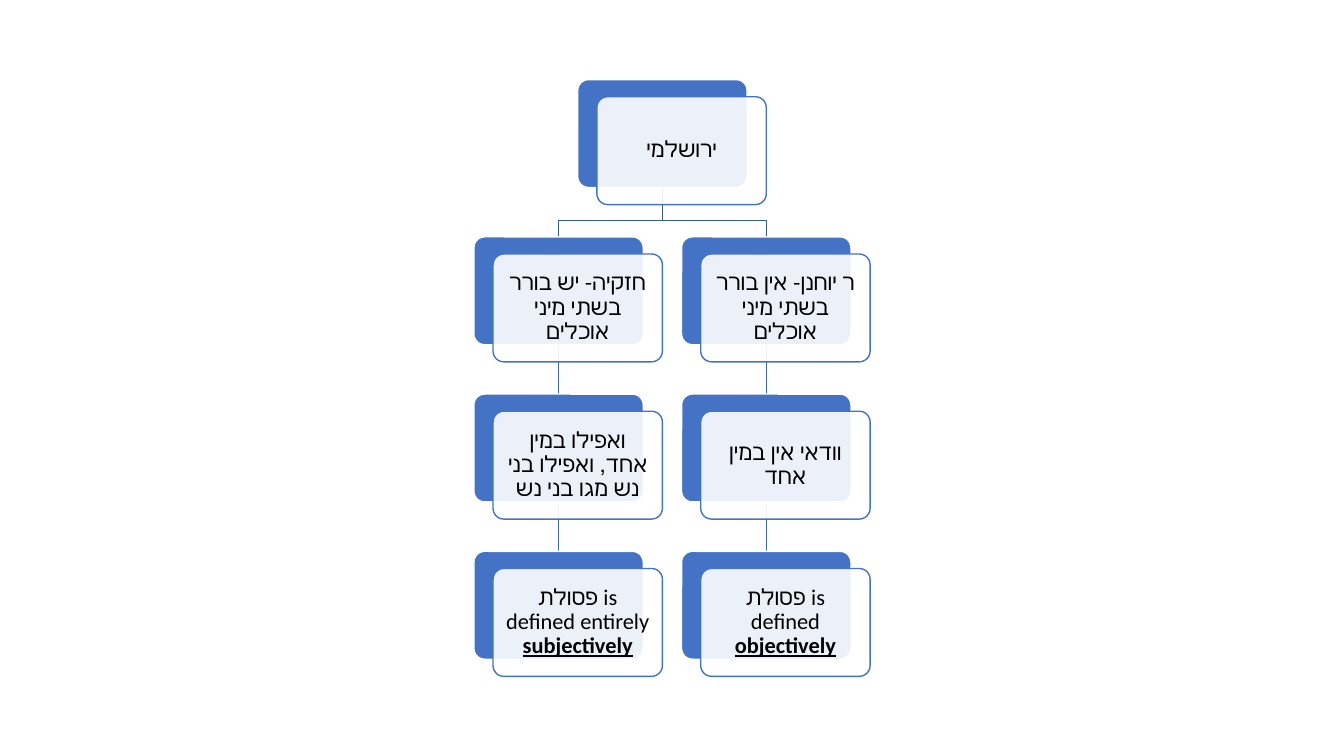
from dataclasses import dataclass

from lxml import etree
from pptx import Presentation
from pptx import util as u
from pptx.dml.color import RGBColor
from pptx.enum import shapes, text
from pptx.oxml import ns


@dataclass(frozen=True)
class Theme:
    blue: RGBColor = RGBColor(0x44, 0x72, 0xC4)
    branch: RGBColor = RGBColor(0x36, 0x5B, 0x9D)
    stem: RGBColor = RGBColor(0x3E, 0x67, 0xB2)
    white: RGBColor = RGBColor(0xFF, 0xFF, 0xFF)
    black: RGBColor = RGBColor(0, 0, 0)
    font: str = "Calibri"
    size: u.Pt = u.Pt(16)
    line: u.Pt = u.Pt(1)
    front_opacity: int = 90


THEME = Theme()
CARD_W, CARD_H = u.Inches(1.68), u.Inches(1.07)
COLUMN_STEP, ROW_STEP = u.Inches(2.06), u.Inches(1.56)
OFFSET_X, OFFSET_Y = u.Inches(0.19), u.Inches(0.17)
BRANCH_DROP = u.Inches(0.33)

ROOT = "ירושלמי"
OPINIONS = [
    [
        ("חזקיה- יש בורר בשתי מיני אוכלים", ""),
        ("ואפילו במין אחד, ואפילו בני נש מגו בני נש", ""),
        ("פסולת is defined entirely ", "subjectively"),
    ],
    [
        ("ר יוחנן- אין בורר בשתי מיני אוכלים", ""),
        ("וודאי אין במין אחד", ""),
        ("פסולת is defined ", "objectively"),
    ],
]


def add_panel(slide, left, top, fill, line):
    panel = slide.shapes.add_shape(
        shapes.MSO_SHAPE.ROUNDED_RECTANGLE, left, top, CARD_W, CARD_H)
    panel.adjustments[0] = 0.1
    panel.shadow.inherit = False
    panel.fill.solid()
    panel.fill.fore_color.rgb = fill
    panel.line.color.rgb = line
    panel.line.width = THEME.line
    return panel


def add_card(slide, left, top, statement, emphasis=""):
    add_panel(slide, left, top, THEME.blue, THEME.white)
    front = add_panel(slide, left + OFFSET_X, top + OFFSET_Y, THEME.white, THEME.blue)
    color = front.fill._xPr.find(ns.qn("a:solidFill"))[0]
    etree.SubElement(color, ns.qn("a:alpha"), val=str(THEME.front_opacity * 1000))

    frame = front.text_frame
    frame.word_wrap = True
    frame.vertical_anchor = text.MSO_ANCHOR.MIDDLE
    frame.margin_left = frame.margin_right = u.Inches(0.07)
    frame.margin_top = frame.margin_bottom = u.Inches(0.07)
    paragraph = frame.paragraphs[0]
    paragraph.alignment = text.PP_ALIGN.CENTER
    paragraph.line_spacing = 0.9
    paragraph.font.name = THEME.font
    paragraph.font.size = THEME.size
    paragraph.font.color.rgb = THEME.black
    paragraph.add_run().text = statement
    if emphasis:
        stressed = paragraph.add_run()
        stressed.text = emphasis
        stressed.font.bold = stressed.font.underline = True


def add_branch(slide, parent_x, parent_y, child_x, child_y):
    bend_y = parent_y + BRANCH_DROP
    outline = slide.shapes.build_freeform(parent_x, parent_y)
    outline.add_line_segments(
        [(parent_x, bend_y), (child_x, bend_y), (child_x, child_y)], close=False)
    branch = outline.convert_to_shape()
    branch.shadow.inherit = False
    branch.fill.background()
    branch.line.color.rgb = THEME.branch
    branch.line.width = THEME.line


def add_stem(slide, x, top, bottom):
    stem = slide.shapes.add_connector(shapes.MSO_CONNECTOR.STRAIGHT, x, top, x, bottom)
    stem.line.color.rgb = THEME.stem
    stem.line.width = THEME.line
    etree.SubElement(stem._element.spPr, ns.qn("a:effectLst"))


def add_opinion_tree(slide, left, top):
    root_left = left + COLUMN_STEP * (len(OPINIONS) - 1) // 2
    column_lefts = [left + COLUMN_STEP * column for column in range(len(OPINIONS))]
    row_tops = [top + ROW_STEP * row for row in range(1, len(OPINIONS[0]) + 1)]

    for column_left in column_lefts:
        center = column_left + CARD_W // 2
        for upper, lower in zip(row_tops, row_tops[1:]):
            add_stem(slide, center, upper + CARD_H, lower)
        add_branch(slide, root_left + CARD_W // 2, top + CARD_H, center, row_tops[0])

    add_card(slide, root_left, top, ROOT)
    for column_left, opinion in zip(column_lefts, OPINIONS):
        for row_top, (statement, emphasis) in zip(row_tops, opinion):
            add_card(slide, column_left, row_top, statement, emphasis)


def main():
    deck = Presentation()
    deck.slide_width, deck.slide_height = u.Inches(13.33), u.Inches(7.5)
    slide = deck.slides.add_slide(deck.slide_layouts[6])
    add_opinion_tree(slide, u.Inches(4.7), u.Inches(0.79))
    deck.save("out.pptx")


if __name__ == "__main__":
    main()
